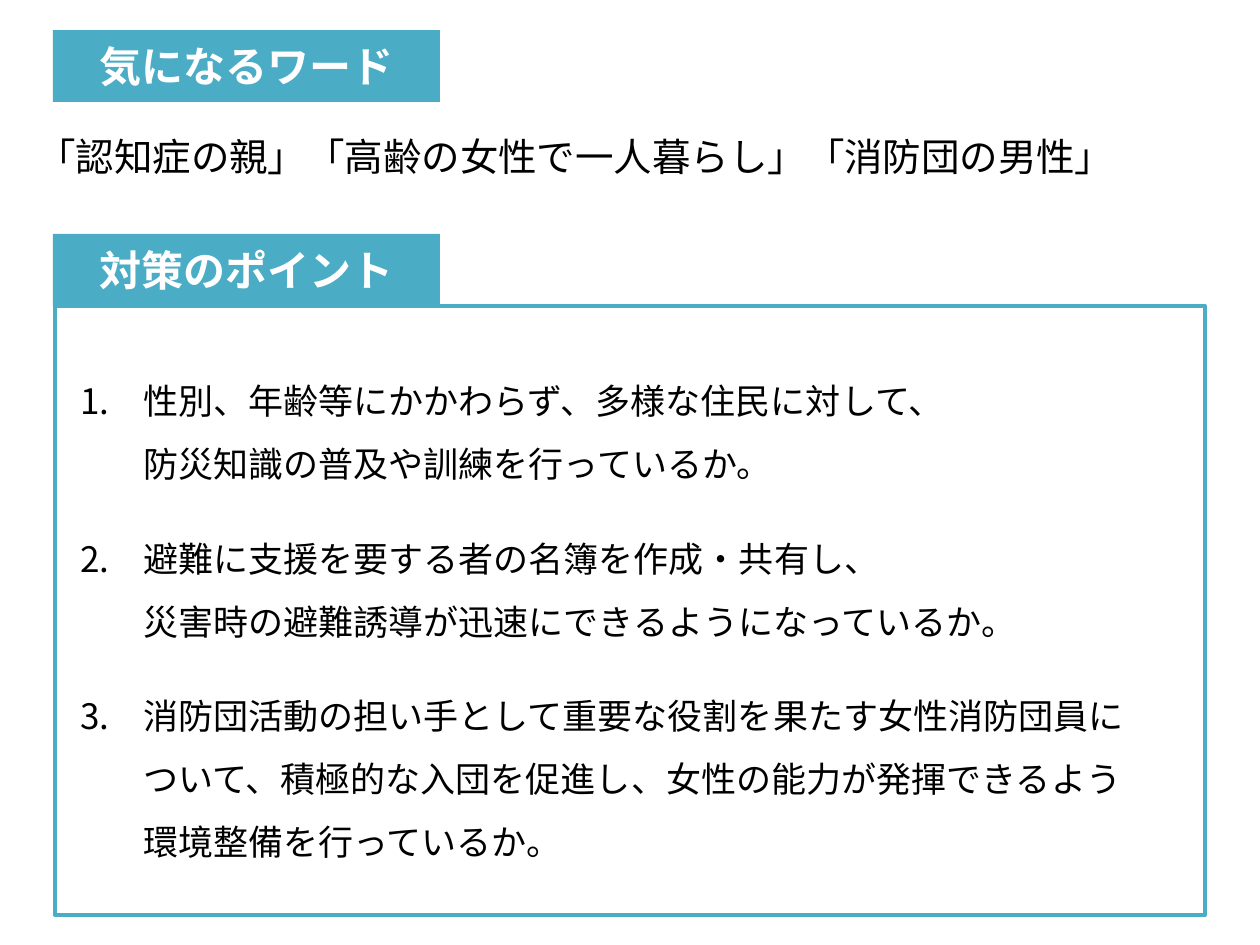
"""Build a slide of key words and disaster-preparedness check points."""
import copy
import dataclasses

import lxml.etree
import pptx
import pptx.dml.color
import pptx.enum.shapes
import pptx.enum.text
import pptx.oxml.ns
import pptx.util

EMU_PER_PX = 914400 / 126
HEADING_LEFT, HEADING_WIDTH, HEADING_HEIGHT = 53, 387, 72
WORDS_HEADING_TOP, POINTS_HEADING_TOP = 30, 234
POINTS = [
    "性別、年齢等にかかわらず、多様な住民に対して、\v防災知識の普及や訓練を行っているか。",
    "避難に支援を要する者の名簿を作成・共有し、\v災害時の避難誘導が迅速にできるようになっているか。",
    "消防団活動の担い手として重要な役割を果たす女性消防団員に\v"
    "ついて、積極的な入団を促進し、女性の能力が発揮できるよう\v環境整備を行っているか。",
]


@dataclasses.dataclass(frozen=True)
class Theme:
    font: str = "Noto Sans CJK JP"
    accent: str = "4BACC6"
    light: str = "FFFFFF"
    dark: str = "000000"
    heading_size: int = 24
    words_size: int = 22
    points_size: int = 20
    frame_width: float = 2.25


THEME = Theme()


def px(length):
    return pptx.util.Emu(round(length * EMU_PER_PX))


def rgb(value):
    return pptx.dml.color.RGBColor.from_string(value)


def place(shape, left, top, width, height):
    shape.left, shape.top = px(left), px(top)
    shape.width, shape.height = px(width), px(height)


def format_runs(paragraph, size, color, bold=False):
    for run in paragraph.runs:
        run.font.name = THEME.font
        run.font.size = pptx.util.Pt(size)
        run.font.bold = bold
        run.font.color.rgb = rgb(color)
        properties = run.font._element
        east_asian = lxml.etree.SubElement(properties, pptx.oxml.ns.qn("a:ea"))
        east_asian.set("typeface", THEME.font)
    for line_break in paragraph._p.findall(pptx.oxml.ns.qn("a:br")):
        line_break.append(copy.deepcopy(properties))


def format_heading(shape, top, text):
    place(shape, HEADING_LEFT, top, HEADING_WIDTH, HEADING_HEIGHT)
    shape.fill.solid()
    shape.fill.fore_color.rgb = rgb(THEME.accent)
    shape.line.fill.background()
    frame = shape.text_frame
    frame.text = text
    frame.word_wrap = True
    frame.auto_size = pptx.enum.text.MSO_AUTO_SIZE.NONE
    frame.vertical_anchor = pptx.enum.text.MSO_ANCHOR.MIDDLE
    paragraph = frame.paragraphs[0]
    paragraph.alignment = pptx.enum.text.PP_ALIGN.CENTER
    format_runs(paragraph, THEME.heading_size, THEME.light, bold=True)


def add_words(slide, text):
    box = slide.shapes.add_textbox(px(25), px(127), px(1137), px(59))
    frame = box.text_frame
    frame.text = text
    frame.word_wrap = True
    frame.auto_size = pptx.enum.text.MSO_AUTO_SIZE.SHAPE_TO_FIT_TEXT
    format_runs(frame.paragraphs[0], THEME.words_size, THEME.dark)


def number_paragraph(paragraph):
    properties = paragraph._p.get_or_add_pPr()
    properties.set("marL", str(px(63)))
    properties.set("indent", str(-px(63)))
    paragraph.line_spacing = 1.5
    paragraph.space_before = pptx.util.Pt(18)
    font = lxml.etree.SubElement(properties, pptx.oxml.ns.qn("a:buFont"))
    font.set("typeface", "+mj-lt")
    numbering = lxml.etree.SubElement(properties, pptx.oxml.ns.qn("a:buAutoNum"))
    numbering.set("type", "arabicPeriod")


def format_points(shape, points):
    place(shape, 55, POINTS_HEADING_TOP + HEADING_HEIGHT, 1150, 609)
    shape.fill.background()
    shape.line.color.rgb = rgb(THEME.accent)
    shape.line.width = pptx.util.Pt(THEME.frame_width)
    frame = shape.text_frame
    frame.word_wrap = True
    frame.auto_size = pptx.enum.text.MSO_AUTO_SIZE.NONE
    frame.vertical_anchor = pptx.enum.text.MSO_ANCHOR.MIDDLE
    frame.margin_left, frame.margin_right = px(25), px(13)
    for index, point in enumerate(points):
        paragraph = frame.add_paragraph() if index else frame.paragraphs[0]
        paragraph.text = point
        number_paragraph(paragraph)
        format_runs(paragraph, THEME.points_size, THEME.dark)


def main():
    presentation = pptx.Presentation()
    presentation.slide_width, presentation.slide_height = px(1260), px(945)
    slide = presentation.slides.add_slide(presentation.slide_layouts[1])
    format_heading(slide.shapes.title, WORDS_HEADING_TOP, "気になるワード")
    add_words(slide, "「認知症の親」「高齢の女性で一人暮らし」「消防団の男性」")
    format_points(slide.placeholders[1], POINTS)
    rectangle = pptx.enum.shapes.MSO_SHAPE.RECTANGLE
    heading = slide.shapes.add_shape(rectangle, 0, 0, 0, 0)
    heading.shadow.inherit = False
    format_heading(heading, POINTS_HEADING_TOP, "対策のポイント")
    presentation.save("out.pptx")


if __name__ == "__main__":
    main()
